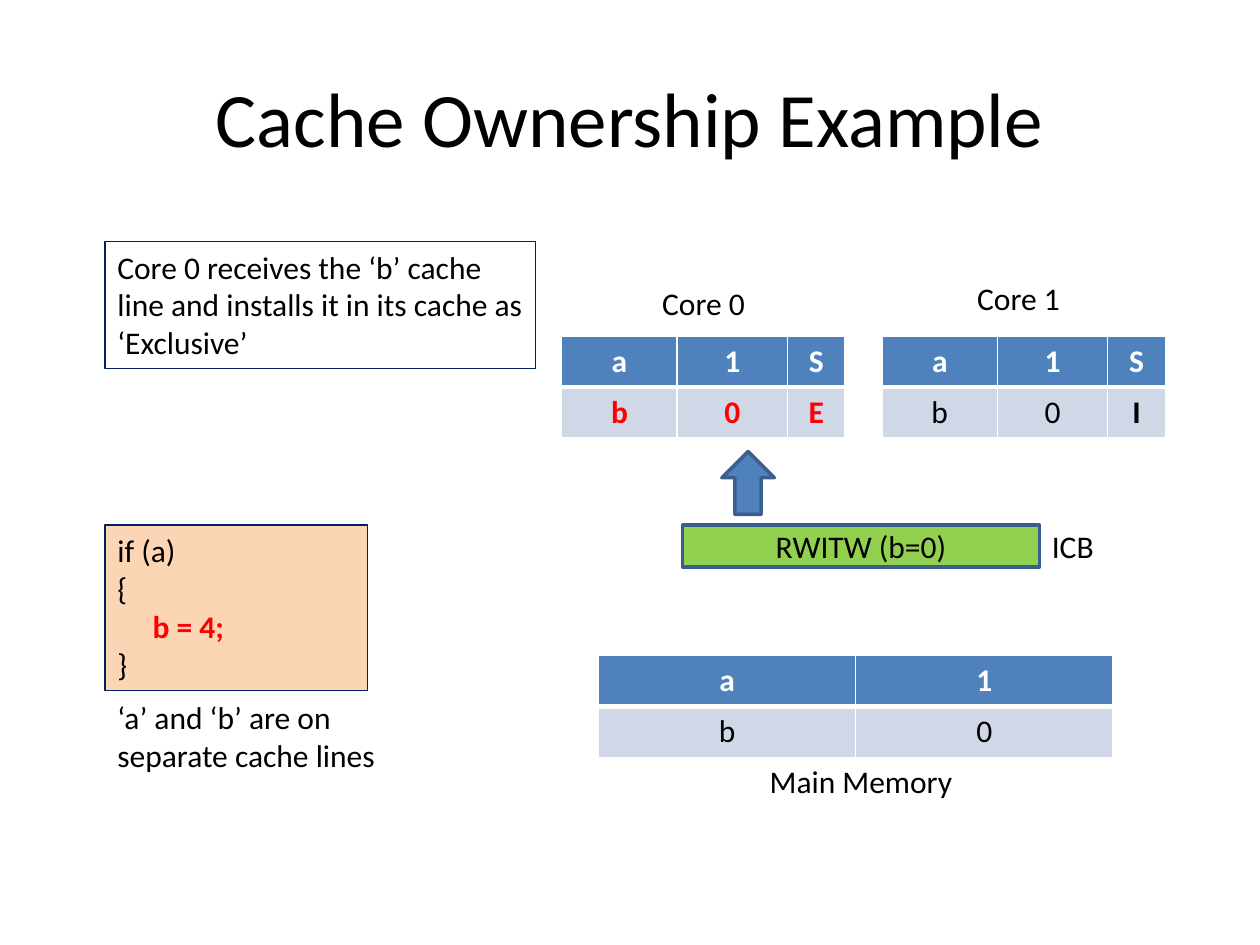
from lxml.etree import SubElement
from pptx import Presentation
from pptx.dml.color import RGBColor
from pptx.enum.shapes import MSO_SHAPE
from pptx.enum.text import MSO_ANCHOR, MSO_AUTO_SIZE, PP_ALIGN
from pptx.oxml.ns import qn
from pptx.util import Inches, Pt

COLORS = {
    "black": "000000",
    "white": "FFFFFF",
    "red": "FF0000",
    "navy": "002060",
    "blue": "4F81BD",
    "dark blue": "3A5F8C",
    "pale blue": "D0D8E8",
    "peach": "FCD5B5",
    "green": "92D050",
}
COLUMNS, ROWS = 120, 90
CACHE_WIDTHS = (11, 10.5, 5.5)
MEMORY_WIDTHS = (24.5, 24.5)
TABLE_ROW = 4.87


def color(name):
    return RGBColor.from_string(COLORS[name])


class SlideBuilder:
    font = "Calibri"
    size = 18

    def __init__(self, presentation):
        self.slide = presentation.slides.add_slide(presentation.slide_layouts[6])
        self.column = presentation.slide_width / COLUMNS
        self.row = presentation.slide_height / ROWS

    def place(self, left, top, width, height):
        return (int(left * self.column), int(top * self.row),
                int(width * self.column), int(height * self.row))

    def style(self, paragraph, ink="black", bold=False, size=None, align=PP_ALIGN.LEFT):
        paragraph.alignment = align
        paragraph.font.name = self.font
        paragraph.font.size = Pt(size or self.size)
        paragraph.font.bold = bold
        paragraph.font.color.rgb = color(ink)

    def fill_text(self, frame, text, anchor=MSO_ANCHOR.TOP, wrap=True, grow=True, **style):
        frame.word_wrap = wrap
        frame.vertical_anchor = anchor
        frame.auto_size = MSO_AUTO_SIZE.SHAPE_TO_FIT_TEXT if grow else MSO_AUTO_SIZE.NONE
        frame.text = text
        for paragraph in frame.paragraphs:
            self.style(paragraph, **style)

    def label(self, area, text, **options):
        box = self.slide.shapes.add_textbox(*self.place(*area))
        self.fill_text(box.text_frame, text, **options)

    def shape(self, area, kind=MSO_SHAPE.RECTANGLE, fill=None, line="navy", weight=0.75):
        shape = self.slide.shapes.add_shape(kind, *self.place(*area))
        shape.shadow.inherit = False
        if fill:
            shape.fill.solid()
            shape.fill.fore_color.rgb = color(fill)
        else:
            shape.fill.background()
        shape.line.color.rgb = color(line)
        shape.line.width = Pt(weight)
        return shape

    def box(self, area, text, fill=None, line="navy", weight=0.75, **options):
        shape = self.shape(area, fill=fill, line=line, weight=weight)
        self.fill_text(shape.text_frame, text, **options)
        return shape

    def border(self, cell, is_header):
        properties = cell._tc.get_or_add_tcPr()
        thick = "lnB" if is_header else "lnT"
        for side in ("lnL", "lnR", "lnT", "lnB"):
            line = SubElement(properties, qn(f"a:{side}"), w=str(Pt(3 if side == thick else 1)))
            fill = SubElement(line, qn("a:solidFill"))
            SubElement(fill, qn("a:srgbClr"), val=COLORS["white"])

    def table(self, left, top, widths, header, body, ink="black", bold=()):
        area = self.place(left, top, sum(widths), 2 * TABLE_ROW)
        table = self.slide.shapes.add_table(2, len(widths), *area).table
        for column, width in zip(table.columns, widths):
            column.width = int(width * self.column)
        for row_index, texts in enumerate((header, body)):
            is_header = row_index == 0
            table.rows[row_index].height = int(TABLE_ROW * self.row)
            for column_index, text in enumerate(texts):
                cell = table.cell(row_index, column_index)
                self.border(cell, is_header)
                cell.fill.solid()
                cell.fill.fore_color.rgb = color("blue" if is_header else "pale blue")
                cell.text = text
                self.style(cell.text_frame.paragraphs[0],
                           ink="white" if is_header else ink,
                           bold=is_header or text in bold,
                           align=PP_ALIGN.CENTER)


def main():
    presentation = Presentation()
    presentation.slide_width = Inches(10)
    presentation.slide_height = Inches(7.5)
    builder = SlideBuilder(presentation)
    center = PP_ALIGN.CENTER

    builder.label((6, 3.6, 108, 15), "Cache Ownership Example", size=44,
                  anchor=MSO_ANCHOR.MIDDLE, grow=False, align=center)

    code = builder.box((10, 50, 25, 15.75), "if (a)\n{\nb = 4;\n}", fill="peach")
    assignment = code.text_frame.paragraphs[2]
    builder.style(assignment, ink="red", bold=True)
    assignment._p.get_or_add_pPr().set("marL", str(Inches(0.28)))
    builder.label((10, 65.9, 28.8, 8.5), "‘a’ and ‘b’ are on separate cache lines")
    builder.box((10, 23, 41, 12.12),
                "Core 0 receives the ‘b’ cache line and installs it in its cache as ‘Exclusive’")

    builder.box((65, 50, 34, 4), "RWITW (b=0)", fill="green", line="dark blue", weight=2,
                anchor=MSO_ANCHOR.MIDDLE, grow=False, align=center)
    builder.label((99, 49.6, 6.5, 4.8), "ICB", wrap=False)
    builder.shape((68.75, 43, 5, 6), MSO_SHAPE.UP_ARROW, "blue", "dark blue", 2)

    builder.table(53.5, 32, CACHE_WIDTHS, "a1S", "b0E", ink="red", bold="b0E")
    builder.table(84, 32, CACHE_WIDTHS, "a1S", "b0I", bold="I")
    builder.table(57, 62.4, MEMORY_WIDTHS, "a1", "b0")

    for left, top, width, text in (
        (56, 26.5, 22, "Core 0"),
        (86, 26, 22, "Core 1"),
        (67.5, 72, 29, "Main Memory"),
    ):
        builder.label((left, top, width, 4.8), text, align=center)

    presentation.save("out.pptx")


if __name__ == "__main__":
    main()
